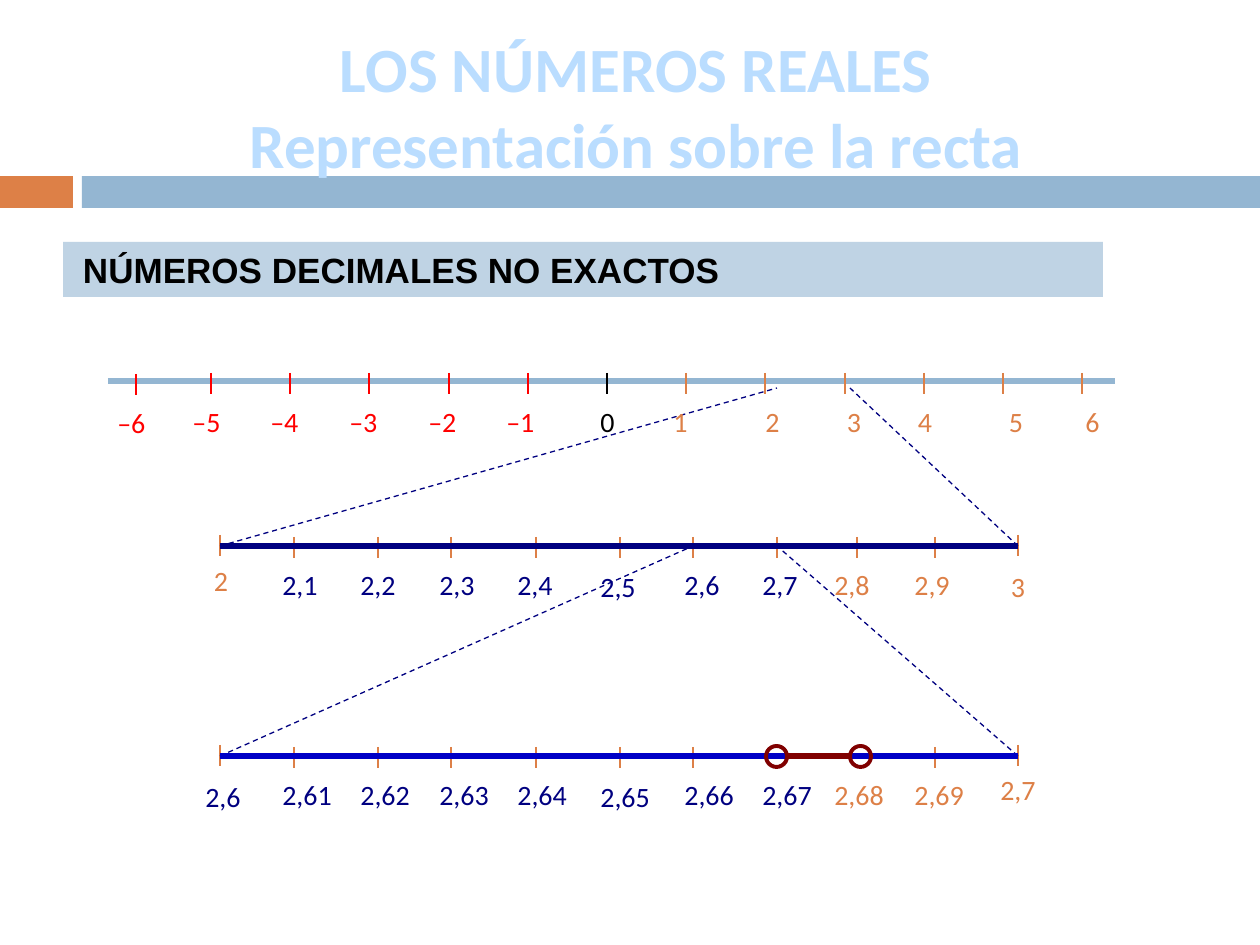
import lxml.etree
import pptx
import pptx.dml.color
import pptx.enum.dml
import pptx.enum.shapes
import pptx.enum.text
import pptx.oxml.ns
import pptx.util

SCALE = 914400 / 126
ORANGE, BLUE, NAVY = "DD8047", "94B6D2", "000080"
RED, BLACK, MAROON = "FF0000", "000000", "800000"
LEFT, CENTER = pptx.enum.text.PP_ALIGN.LEFT, pptx.enum.text.PP_ALIGN.CENTER
TOP, MIDDLE = pptx.enum.text.MSO_ANCHOR.TOP, pptx.enum.text.MSO_ANCHOR.MIDDLE
FIT, FIXED = pptx.enum.text.MSO_AUTO_SIZE.SHAPE_TO_FIT_TEXT, pptx.enum.text.MSO_AUTO_SIZE.NONE
KINDS = pptx.enum.shapes.MSO_SHAPE
STRAIGHT = pptx.enum.shapes.MSO_CONNECTOR.STRAIGHT
DASH = pptx.enum.dml.MSO_LINE.DASH


def px(*nums):
    return [pptx.util.Emu(round(n * SCALE)) for n in nums]


def tint(code):
    return pptx.dml.color.RGBColor.from_string(code)


def put(item, values):
    for name, value in values.items():
        setattr(item, name, value)


class Board:
    def __init__(self, slide):
        self.slide = slide
        self.root = slide.shapes
        self.face = "Calibri"
        self.size = 16

    def group(self):
        self.root = self.slide.shapes.add_group_shape().shapes

    def fill_text(self, shape, text, color, align=LEFT, frame=None, font=None):
        put(shape.text_frame, {"word_wrap": True, "auto_size": FIT,
                               "vertical_anchor": TOP, **(frame or {})})
        shape.text_frame.text = text
        para = shape.text_frame.paragraphs[0]
        para.alignment = align
        look = {"name": self.face, "size": pptx.util.Pt(self.size), **(font or {})}
        for run in para.runs:
            put(run.font, look)
            run.font.color.rgb = tint(color)

    def title(self, text, box, color):
        shape = self.slide.shapes.title
        put(shape, dict(zip(("left", "top", "width", "height"), px(*box))))
        self.fill_text(shape, text, color, CENTER,
                       {"auto_size": FIXED, "vertical_anchor": MIDDLE},
                       {"size": pptx.util.Pt(36), "bold": True})

    def band(self, box, color):
        shape = self.root.add_shape(KINDS.RECTANGLE, *px(*box))
        shape.shadow.inherit = False
        shape.fill.solid()
        shape.fill.fore_color.rgb = tint(color)
        shape.line.fill.background()
        return shape

    def ring(self, box, color):
        shape = self.root.add_shape(KINDS.OVAL, *px(*box))
        shape.shadow.inherit = False
        shape.fill.background()
        shape.line.color.rgb = tint(color)
        shape.line.width = pptx.util.Pt(2.25)

    def label(self, text, left, top, width, color, align=LEFT):
        shape = self.root.add_textbox(*px(left, top, width, 47))
        self.fill_text(shape, text, color, align)

    def line(self, start, end, color, width, dash=None):
        link = self.root.add_connector(STRAIGHT, *px(*start, *end))
        put(link.line, {"width": pptx.util.Pt(width), "dash_style": dash})
        link.line.color.rgb = tint(color)
        lxml.etree.SubElement(link.element.spPr, pptx.oxml.ns.qn("a:effectLst"))

    def tick(self, x, top, color):
        self.line((x, top), (x, top + 21), color, 1)

    def zoom(self, start, end):
        self.line(start, end, NAVY, 0.75, DASH)


def scale(board, y, stem, marks, widths, ends, color, source):
    board.group()
    for x in marks:
        board.tick(x, y - 9, ORANGE)
    lefts = (270, 348, 427, 505, 588, 672, 750, 822, 902)
    for digit, (left, width) in enumerate(zip(lefts, widths), 1):
        drop = 17 if digit == 5 else 15
        board.label(f"{stem}{digit}", left, y + drop, width, NAVY if digit < 8 else ORANGE)
    for text, left, drop, shade in ends:
        board.label(text, left, y + drop, 86, shade, CENTER)
    for x, upper in zip((220, 1018), source):
        board.tick(x, y - 11, ORANGE)
        board.zoom((x, y), upper)
    board.line((220, y), (1018, y), color, 3)


def whole(board, y):
    board.group()
    board.line((108, y), (1115, y), BLUE, 3)
    board.tick(136, y - 7, RED)
    board.label("–6", 105, y + 18, 73, RED)
    for step in range(12):
        shade = RED if step < 5 else BLACK if step == 5 else ORANGE
        board.tick(round(211 + 79.2 * step), y - 8, shade)
    for step in range(5):
        board.label(f"–{5 - step}", round(180 + 78.5 * step), y + 17, 73, RED)
    board.label("0", 588, y + 17, 54, BLACK)
    spots = ((649, 63), (727, 91), (810, 88), (891, 68), (973, 86), (1047, 91))
    for number, (left, width) in enumerate(spots, 1):
        board.label(str(number), left, y + 17, width, ORANGE, CENTER)


def main():
    deck = pptx.Presentation()
    deck.slide_width, deck.slide_height = px(1260, 945)
    board = Board(deck.slides.add_slide(deck.slide_layouts[5]))

    board.title("LOS NÚMEROS REALES\vRepresentación sobre la recta", (74, 37, 1124, 136), "BADDFF")
    for box, color in (((0, 176, 73, 32), ORANGE), ((82, 176, 1178, 32), BLUE)):
        strip = board.band(box, color)
        board.slide.shapes.title.element.addprevious(strip.element)

    head = board.band((63, 242, 1040, 55), "BFD3E4")
    board.fill_text(head, "NÚMEROS DECIMALES NO EXACTOS", BLACK, LEFT,
                    {"margin_left": px(20)[0]},
                    {"name": "Arial", "size": pptx.util.Pt(20), "bold": True})

    marks = (294, 378, 451, 536, 620, 693, 777, 857, 935)
    scale(board, 546, "2,", marks, (73, 73, 73, 73, 72, 63, 91, 88, 68),
          (("2", 178, 11, ORANGE), ("3", 975, 17, ORANGE)),
          NAVY, ((777, 388), (850, 388)))
    scale(board, 756, "2,6", marks[:6] + marks[8:], (98, 93, 87, 93, 84, 84, 91, 88, 94),
          (("2,6", 180, 17, NAVY), ("2,7", 975, 10, ORANGE)),
          "0000C6", ((693, 546), (777, 546)))
    for left in (766, 850):
        board.ring((left, 746, 21, 21), MAROON)
    board.line((787, 756), (850, 756), MAROON, 3)
    whole(board, 381)

    deck.save("out.pptx")


if __name__ == "__main__":
    main()
